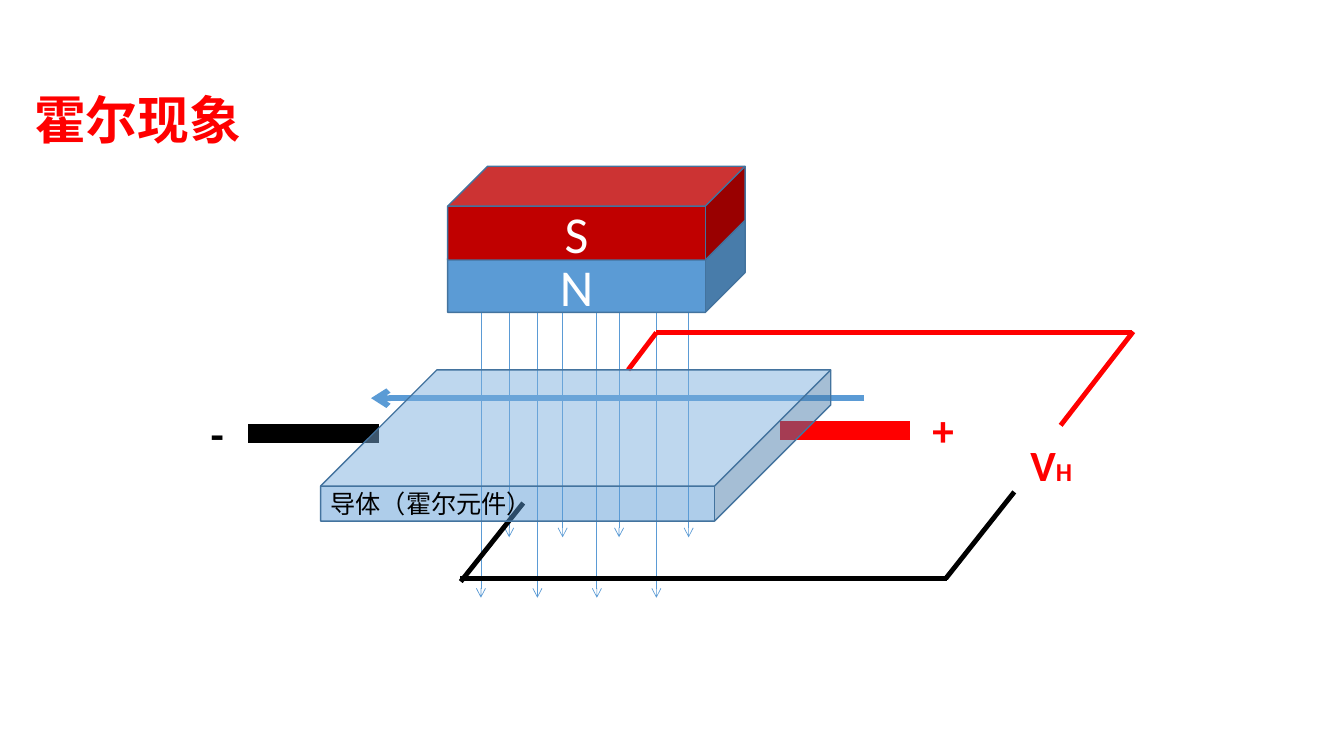
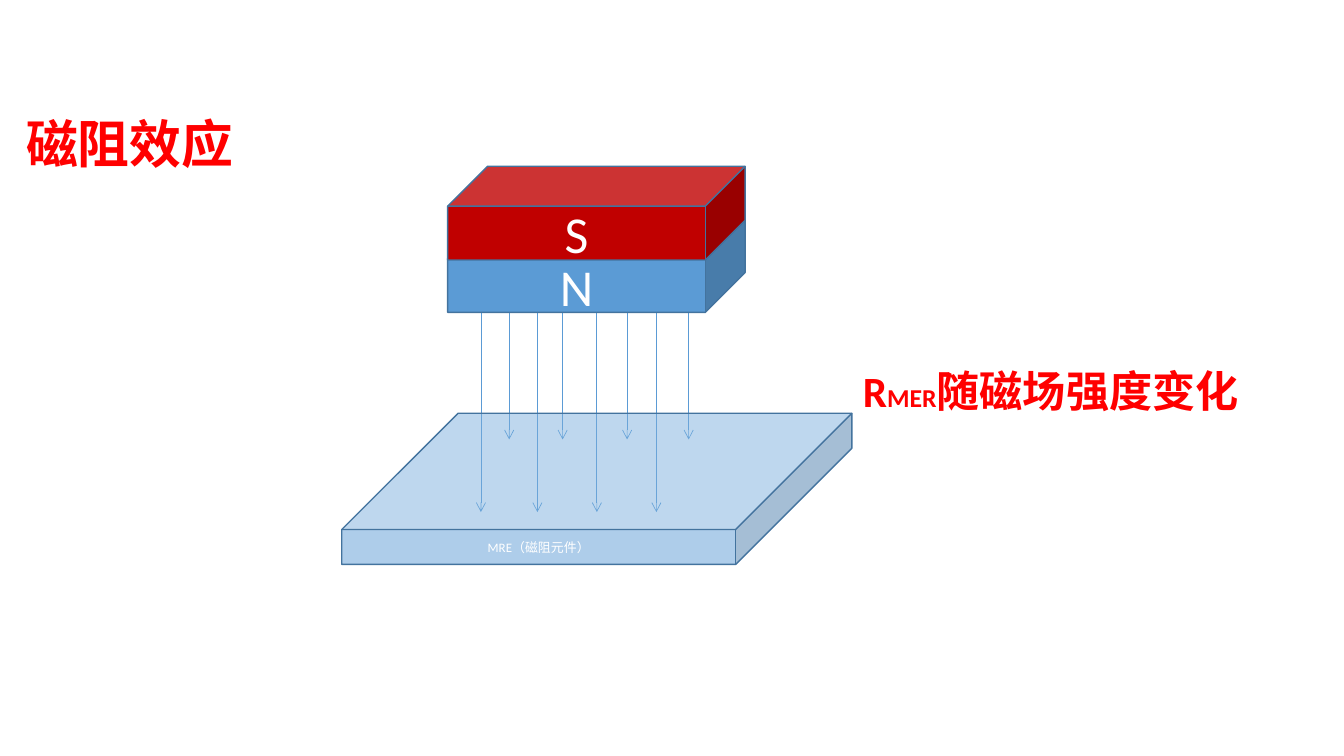
"""Build two slides on the Hall effect and the magnetoresistive effect."""
from lxml.etree import SubElement
from pptx import Presentation
from pptx.dml.color import RGBColor
from pptx.enum.shapes import MSO_CONNECTOR as LINK, MSO_SHAPE as SHAPE
from pptx.enum.text import MSO_ANCHOR as ANCHOR, PP_ALIGN as ALIGN
from pptx.oxml.ns import qn
from pptx.util import Inches, Pt

RED = RGBColor(0xFF, 0x00, 0x00)
DARK = RGBColor(0xC0, 0x00, 0x00)
BLUE = RGBColor(0x5B, 0x9B, 0xD5)
EDGE = RGBColor(0x43, 0x73, 0x9E)
BLACK = RGBColor(0x00, 0x00, 0x00)
WHITE = RGBColor(0xFF, 0xFF, 0xFF)
FACE = "Calibri"


def wire(slide, ends, color, width, arrow=False):
    link = slide.shapes.add_connector(LINK.STRAIGHT, *map(Inches, ends))
    link.line.color.rgb = color
    link.line.width = Pt(width)
    props = link._element.spPr
    SubElement(props, qn("a:effectLst"))
    if arrow:
        SubElement(props.find(qn("a:ln")), qn("a:tailEnd"), type="arrow")


def cube(slide, box, depth, fill, text, size, color, align, alpha=100):
    block = slide.shapes.add_shape(SHAPE.CUBE, *map(Inches, box))
    block.shadow.inherit = False
    block.adjustments[0] = depth
    block.fill.solid()
    block.fill.fore_color.rgb = fill
    if alpha < 100:
        tint = block._element.spPr.find(qn("a:solidFill"))[0]
        SubElement(tint, qn("a:alpha"), val=str(alpha * 1000))
    block.line.color.rgb = EDGE
    block.line.width = Pt(1)
    block.text_frame.vertical_anchor = ANCHOR.MIDDLE
    para = block.text_frame.paragraphs[0]
    para.text = text
    para.alignment = align
    para.font.name = FACE
    para.font.size = Pt(size)
    para.font.color.rgb = color


deck = Presentation()
deck.slide_width, deck.slide_height = Inches(13.33), Inches(7.5)
hall = deck.slides.add_slide(deck.slide_layouts[5])
ohm = deck.slides.add_slide(deck.slide_layouts[5])

for slide, text, box, front, back, third in (
    (hall, "霍尔现象", (0.24, 0.82, 2.94, 0.72), 5.93, 5.33, 6.14),
    (ohm, "磁阻效应", (0.16, 1.06, 2.84, 0.72), 5.08, 4.36, 6.22),
):
    title = slide.shapes.title
    title.left, title.top, title.width, title.height = map(Inches, box)
    title.text = text
    para = title.text_frame.paragraphs[0]
    para.alignment = ALIGN.LEFT
    para.font.name = FACE
    para.font.size = Pt(37)
    para.font.bold = True
    para.font.color.rgb = RED

    for x in (4.77, 5.33, 5.92, 6.51):
        wire(slide, (x, 3.1, x, front), BLUE, 0.5, True)
    for x in (5.05, 5.58, third, 6.83):
        wire(slide, (x, 2.38, x, back), BLUE, 0.5, True)
    for pole, top, fill in (("N", 2.17, BLUE), ("S", 1.65, DARK)):
        cube(slide, (4.44, top, 2.95, 0.93), 0.425, fill, pole, 37, WHITE, ALIGN.CENTER)

wire(hall, (8.57, 3.95, 3.68, 3.95), BLUE, 4, True)
for ends, color, width in (
    ((2.46, 4.3, 3.76, 4.3), BLACK, 14),
    ((7.74, 4.27, 9.03, 4.27), RED, 14),
    ((6.23, 3.67, 6.51, 3.3), RED, 3.5),
    ((6.51, 3.3, 11.23, 3.3), RED, 3.5),
    ((10.52, 4.22, 11.24, 3.29), RED, 3.5),
    ((4.57, 5.77, 5.19, 4.99), BLACK, 3.5),
    ((9.39, 5.74, 4.56, 5.74), BLACK, 3.5),
    ((9.38, 5.74, 10.06, 4.88), BLACK, 3.5),
):
    wire(hall, ends, color, width)

for slide, left, top, text, size, color, align in (
    (hall, 3.18, 3.67, "导体（霍尔元件）", 18, BLACK, ALIGN.LEFT),
    (ohm, 3.39, 4.1, "MRE（磁阻元件）", 9.2, WHITE, ALIGN.CENTER),
):
    cube(slide, (left, top, 5.06, 1.5), 0.769, BLUE, text, size, color, align, 49)

for slide, left, top, width, color, runs in (
    (hall, 9.15, 3.95, 0.28, RED, [("+", 30.8)]),
    (hall, 1.99, 3.99, 0.28, BLACK, [("-", 30.8)]),
    (hall, 10.12, 4.3, 0.79, RED, [("V", 30.8), ("H", 18.4)]),
    (ohm, 8.46, 3.57, 4.4, RED, [("R", 30.8), ("MER", 18.4), ("随磁场强度变化", 30.8)]),
):
    label = slide.shapes.add_textbox(*map(Inches, (left, top, width, 0.62)))
    label.text_frame.word_wrap = True
    para = label.text_frame.paragraphs[0]
    para.font.name = FACE
    para.font.bold = True
    para.font.color.rgb = color
    for text, size in runs:
        run = para.add_run()
        run.text = text
        run.font.size = Pt(size)

deck.save("out.pptx")
